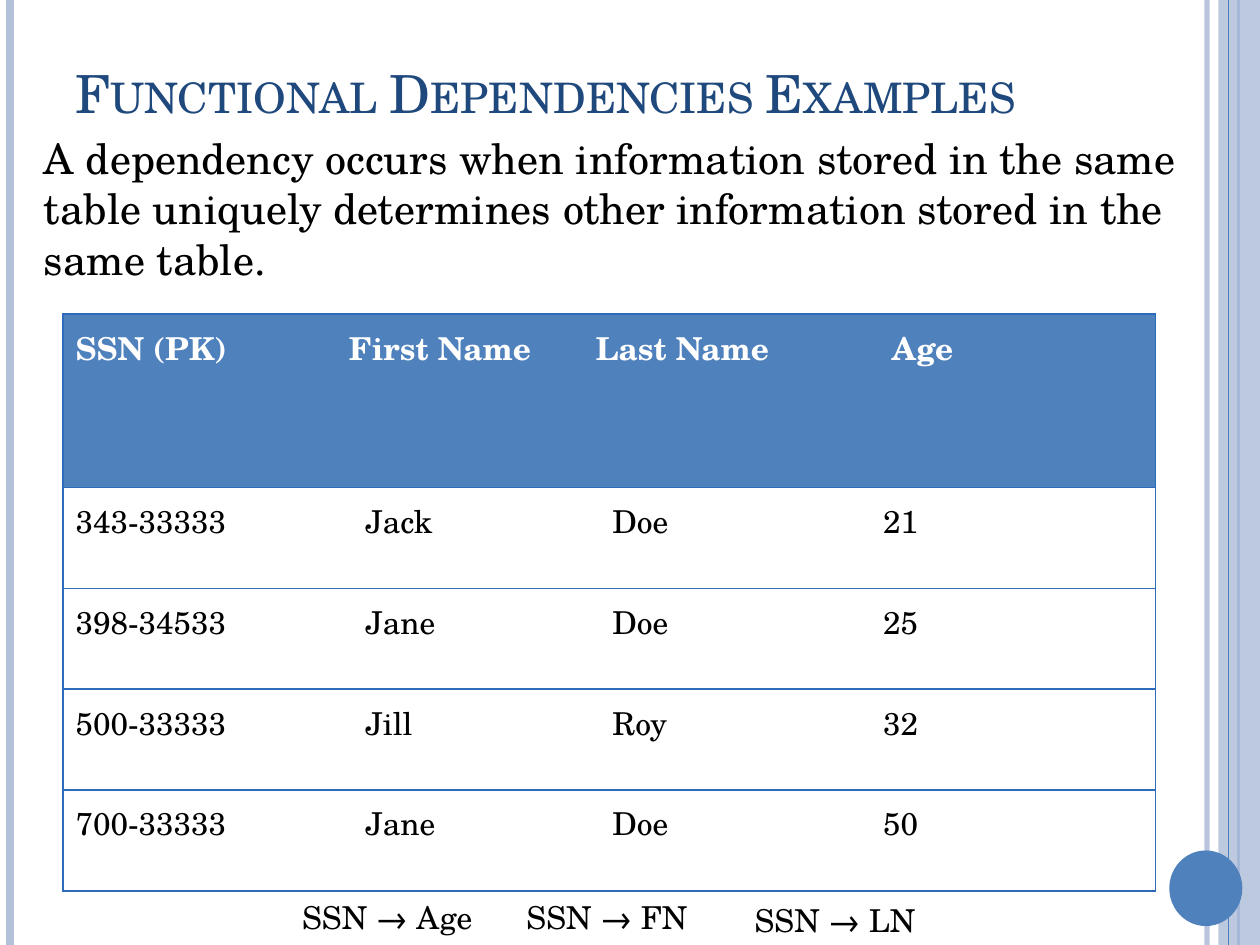
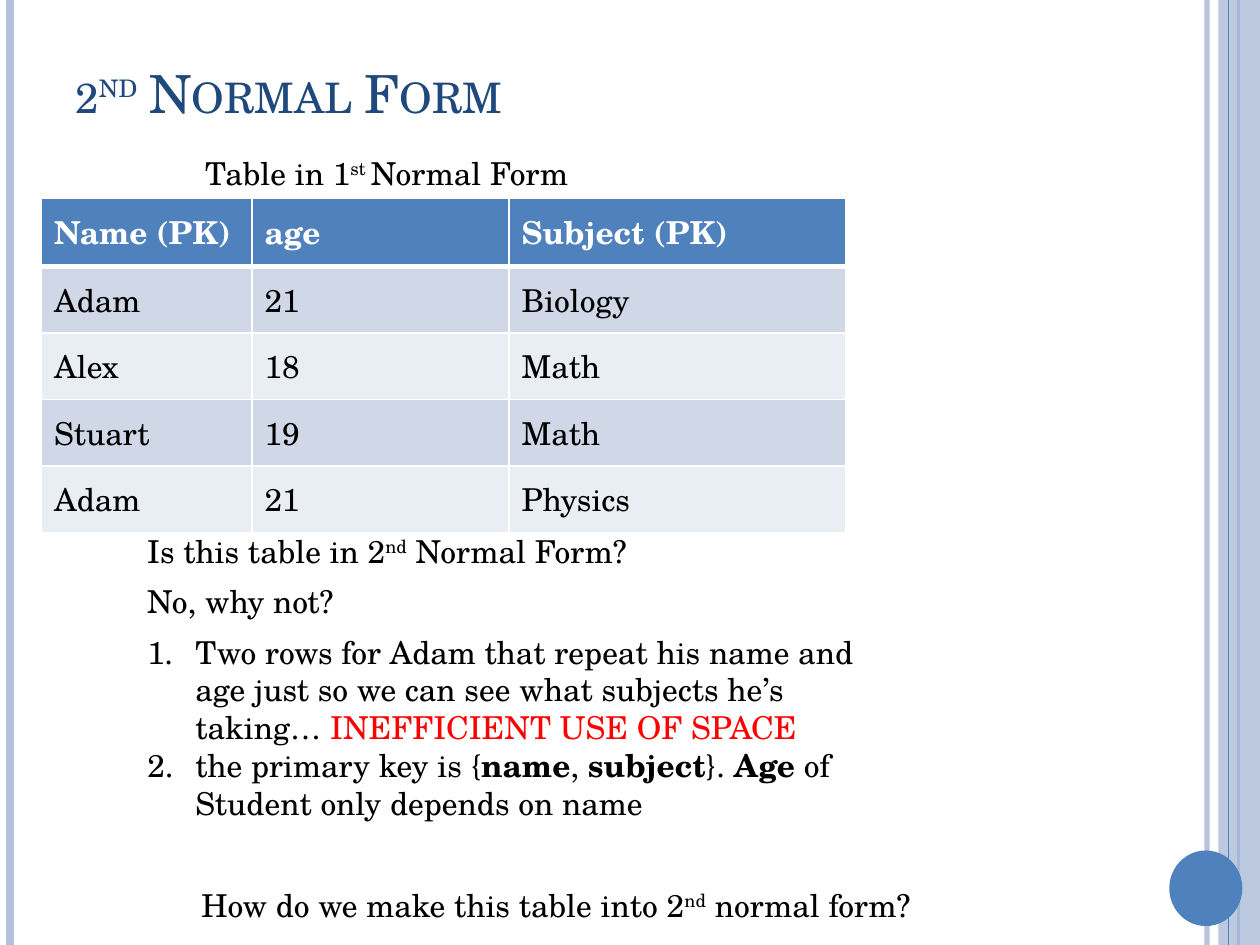
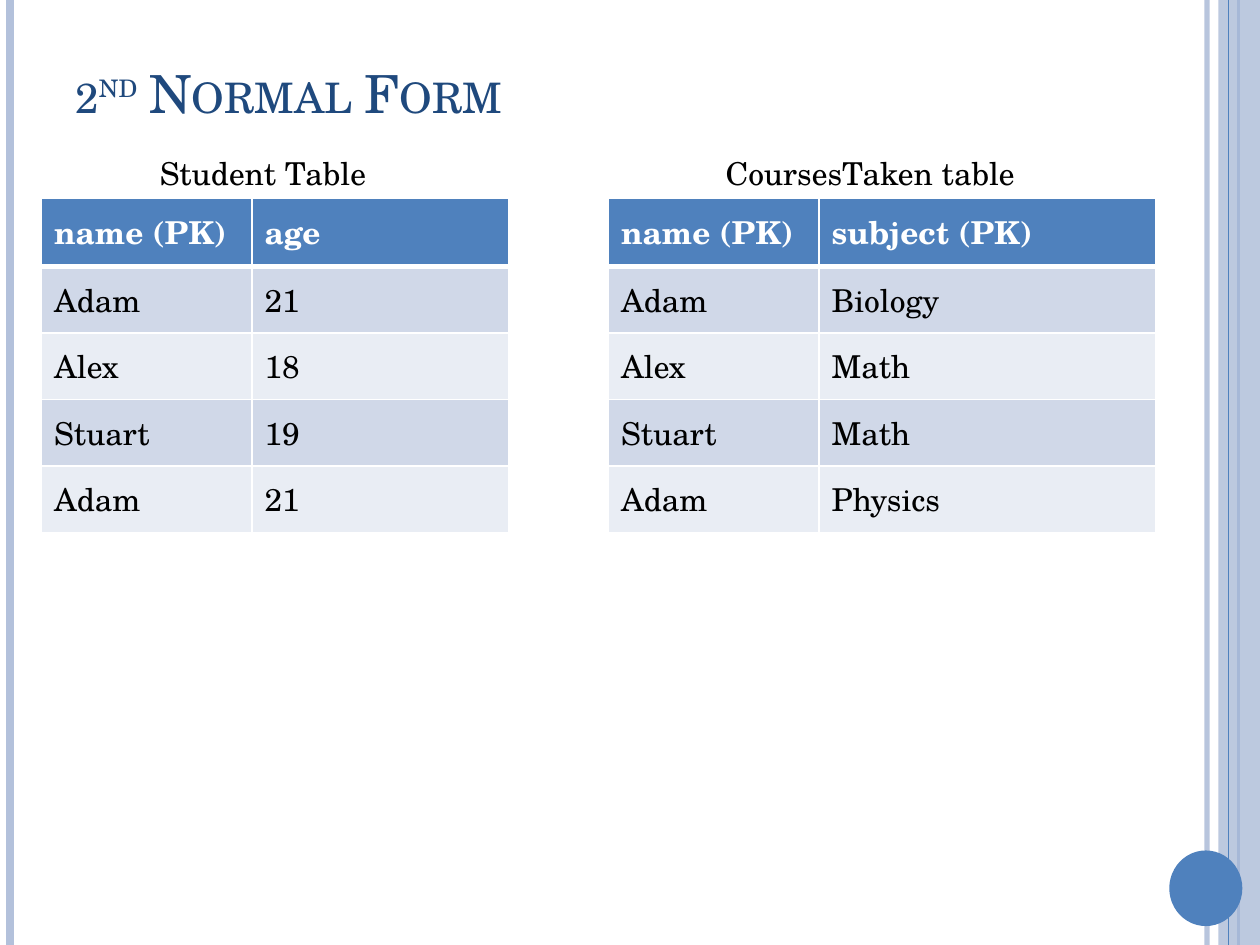
import pptx
import pptx.util
import pptx.oxml
import pptx.oxml.ns
import pptx.dml.color
import pptx.enum.shapes
import pptx.enum.text
import lxml.etree

Inches = pptx.util.Inches
Pt = pptx.util.Pt
RGBColor = pptx.dml.color.RGBColor
qn = pptx.oxml.ns.qn

FONT = "TeX Gyre Schola"
BLACK = RGBColor(0x00, 0x00, 0x00)
WHITE = RGBColor(0xFF, 0xFF, 0xFF)
RED = RGBColor(0xFF, 0x00, 0x00)
NAVY = RGBColor(0x1F, 0x49, 0x7D)
BLUE = RGBColor(0x4F, 0x81, 0xBD)
PALE = RGBColor(0xB3, 0xC1, 0xDB)
EDGE = RGBColor(0x2C, 0x6C, 0xB9)
BANDS = [RGBColor(0xD0, 0xD8, 0xE8), RGBColor(0xE9, 0xED, 0xF4)]

SUP = {"sup": True}
BOLD = {"bold": True}
FORM = ["2", ("nd", SUP), " Normal Form"]
NAME, AGE, COURSE = 1.67, 2.04, 2.67

PEOPLE = [
    ["SSN (PK)", "First Name", "Last Name", "Age"],
    ["343-33333", "Jack", "Doe", "21"],
    ["398-34533", "Jane", "Doe", "25"],
    ["500-33333", "Jill", "Roy", "32"],
    ["700-33333", "Jane", "Doe", "50"],
]
TAKEN = [
    ["Adam", "21", "Biology"],
    ["Alex", "18", "Math"],
    ["Stuart", "19", "Math"],
    ["Adam", "21", "Physics"],
]
REASONS = [
    ["Two rows for Adam that repeat his name and age just so we can see "
     "what subjects he’s taking… ",
     ("INEFFICIENT USE OF SPACE", {"color": RED})],
    ["the primary key is {", ("name", BOLD), ", ", ("subject", BOLD), "}. ",
     ("Age", BOLD), " of Student only depends on name"],
]

SLIDES = [
    {
        "title": ["Functional Dependencies Examples"],
        "tables": [{
            "at": (0.5, 2.49), "cols": [2.17, 1.96, 2.28, 2.26],
            "rows": [1.38, 0.8, 0.8, 0.8, 0.8], "data": PEOPLE,
            "ruled": True, "head": [0, 0, 0, 0.07], "inset": [0, 0.13, 0.13, 0],
        }],
        "notes": [
            ((0.25, 1, 9.42, 1.31),
             ["A dependency occurs when information stored in the same table "
              "uniquely determines other information stored in the same table."],
             {"size": 24, "wrap": True}),
            ((2.3, 7.08, 1.63, 0.4), ["SSN → Age"], {}),
            ((4.08, 7.08, 1.49, 0.4), ["SSN → FN"], {}),
            ((5.89, 7.1, 1.49, 0.4), ["SSN → LN"], {}),
        ],
    },
    {
        "title": FORM,
        "list": ((1.07, 4.97, 6.17, 1.62), REASONS),
        "tables": [{
            "at": (0.33, 1.57), "cols": [NAME, AGE, COURSE],
            "data": [["Name (PK)", "age", "Subject (PK)"]] + TAKEN,
        }],
        "notes": [
            ((1.53, 1.17, 3.17, 0.4),
             ["Table in 1", ("st ", SUP), "Normal Form"], {}),
            ((1.07, 4.17, 4.08, 0.4),
             ["Is this table in 2", ("nd", SUP), " Normal Form?"], {}),
            ((1.07, 4.57, 1.72, 0.4), ["No, why not?"], {}),
            ((1.5, 6.98, 5.93, 0.4),
             ["How do we make this table into 2", ("nd", SUP), " normal form?"], {}),
        ],
    },
    {
        "title": FORM,
        "tables": [
            {"at": (0.33, 1.57), "cols": [NAME, AGE],
             "data": [["name (PK)", "age"]] + [row[:2] for row in TAKEN]},
            {"at": (4.83, 1.57), "cols": [NAME, COURSE],
             "data": [["name (PK)", "subject (PK)"]] + [row[::2] for row in TAKEN]},
        ],
        "notes": [
            ((1.17, 1.17, 2.33, 0.4), ["Student Table"], {}),
            ((5.66, 1.17, 3.09, 0.4), ["CoursesTaken table"], {}),
        ],
    },
]

RECT = pptx.enum.shapes.MSO_SHAPE.RECTANGLE
OVAL = pptx.enum.shapes.MSO_SHAPE.OVAL
DECOR = [
    ("line", 9.58, PALE, 3, 93),
    ("line", 0.08, PALE, 4.5, 100),
    ("line", 9.83, BLUE, 1.5, 100),
    (RECT, (9.67, 0, 0.33, 7.5), PALE, 0, 87),
    ("line", 9.75, BLUE, 0.75, 100),
    (OVAL, (9.28, 6.75, 0.58, 0.6), BLUE, 0, 100),
]


def write(par, text, size=18, color=BLACK, bold=False, sup=False, small=False):
    run = par.add_run()
    run.text = text
    font = run.font
    font.name, font.size, font.bold = FONT, Pt(size), bold
    font.color.rgb = color
    props = run._r.get_or_add_rPr()
    if sup:
        props.set("baseline", "30000")
    if small:
        props.set("cap", "small")


def fill_par(par, parts, **fmt):
    par.alignment = pptx.enum.text.PP_ALIGN.LEFT
    par.space_before = Pt(0)
    for part in parts:
        text, extra = (part, {}) if isinstance(part, str) else part
        write(par, text, **{**fmt, **extra})


def place(shape, box):
    shape.left, shape.top, shape.width, shape.height = map(Inches, box)


def fade(shape, alpha):
    for tint in shape.element.iter(qn("a:srgbClr")):
        lxml.etree.SubElement(tint, qn("a:alpha")).set("val", str(alpha * 1000))


def add_decor(deck, slide):
    tree = deck.slide_master.shapes.element
    for num, (kind, at, color, width, alpha) in enumerate(DECOR):
        if kind == "line":
            shape = slide.shapes.add_connector(
                pptx.enum.shapes.MSO_CONNECTOR.STRAIGHT,
                Inches(at), 0, Inches(at), deck.slide_height)
            shape.line.color.rgb = color
            shape.line.width = Pt(width)
            lxml.etree.SubElement(shape.element.spPr, qn("a:effectLst"))
        else:
            shape = slide.shapes.add_shape(kind, *map(Inches, at))
            shape.shadow.inherit = False
            shape.fill.solid()
            shape.fill.fore_color.rgb = color
            shape.line.fill.background()
        if alpha < 100:
            fade(shape, alpha)
        shape.element.xpath("./*/p:cNvPr")[0].set("id", str(100 + num))
        tree.insert(2 + num, shape.element)


def edge(cell, side, color, width):
    line = lxml.etree.SubElement(cell._tc.get_or_add_tcPr(), qn("a:ln" + side))
    if not width:
        lxml.etree.SubElement(line, qn("a:noFill"))
        return
    line.set("w", str(Pt(width)))
    solid = lxml.etree.SubElement(line, qn("a:solidFill"))
    lxml.etree.SubElement(solid, qn("a:srgbClr")).set("val", str(color))


def add_grid(slide, at, cols, data, rows=None, ruled=False, head=None, inset=None):
    rows = rows or [0.47] * len(data)
    zeros = [0] * len(cols)
    box = (*at, sum(cols), sum(rows))
    table = slide.shapes.add_table(len(rows), len(cols), *map(Inches, box)).table
    for col, width in zip(table.columns, cols):
        col.width = Inches(width)
    for r, values in enumerate(data):
        table.rows[r].height = Inches(rows[r])
        pads = (inset if r else head) or zeros
        for c, text in enumerate(values):
            cell = table.cell(r, c)
            cell.margin_left = Inches(0.1 + pads[c])
            cell.margin_top = cell.margin_bottom = Inches(0.08)
            if ruled:
                widths = {"L": c == 0, "R": c == len(cols) - 1, "T": 1, "B": 1}
            else:
                widths = {"L": 1, "R": 1, "T": 3 if r == 1 else 1,
                          "B": 1 if r else 3}
            for side, width in widths.items():
                edge(cell, side, EDGE if ruled else WHITE, width)
            if r and ruled:
                cell.fill.background()
            else:
                cell.fill.solid()
                cell.fill.fore_color.rgb = BANDS[(r - 1) % 2] if r else BLUE
            fill_par(cell.text_frame.paragraphs[0], [text],
                     color=BLACK if r else WHITE, bold=not r)


def add_note(slide, box, parts, wrap=False, **fmt):
    frame = slide.shapes.add_textbox(*map(Inches, box)).text_frame
    frame.word_wrap = wrap
    fill_par(frame.paragraphs[0], parts, **fmt)


def add_list(shape, box, items):
    place(shape, box)
    frame = shape.text_frame
    frame.auto_size = pptx.enum.text.MSO_AUTO_SIZE.NONE
    for num, parts in enumerate(items):
        par = frame.add_paragraph() if num else frame.paragraphs[0]
        fill_par(par, parts)
        props = par._p.get_or_add_pPr()
        props.set("marL", str(Inches(0.38)))
        props.set("indent", str(-Inches(0.38)))
        mark = lxml.etree.SubElement(props, qn("a:buFont"))
        mark.set("typeface", FONT)
        mark = lxml.etree.SubElement(props, qn("a:buAutoNum"))
        mark.set("type", "arabicPeriod")


def add_title(shape, parts):
    place(shape, (0.5, 0.3, 8.67, 0.87))
    frame = shape.text_frame
    frame.auto_size = pptx.enum.text.MSO_AUTO_SIZE.NONE
    frame.vertical_anchor = pptx.enum.text.MSO_ANCHOR.MIDDLE
    fill_par(frame.paragraphs[0], parts, size=30, color=NAVY, small=True)


def main():
    deck = pptx.Presentation()
    deck.slide_width, deck.slide_height = Inches(10), Inches(7.5)
    for num, page in enumerate(SLIDES):
        layout = deck.slide_layouts[1 if "list" in page else 5]
        slide = deck.slides.add_slide(layout)
        if num == 0:
            add_decor(deck, slide)
        add_title(slide.shapes.title, page["title"])
        if "list" in page:
            add_list(slide.placeholders[1], *page["list"])
        for grid in page["tables"]:
            add_grid(slide, **grid)
        for box, parts, fmt in page["notes"]:
            add_note(slide, box, parts, **fmt)
    deck.save("out.pptx")


if __name__ == "__main__":
    main()
